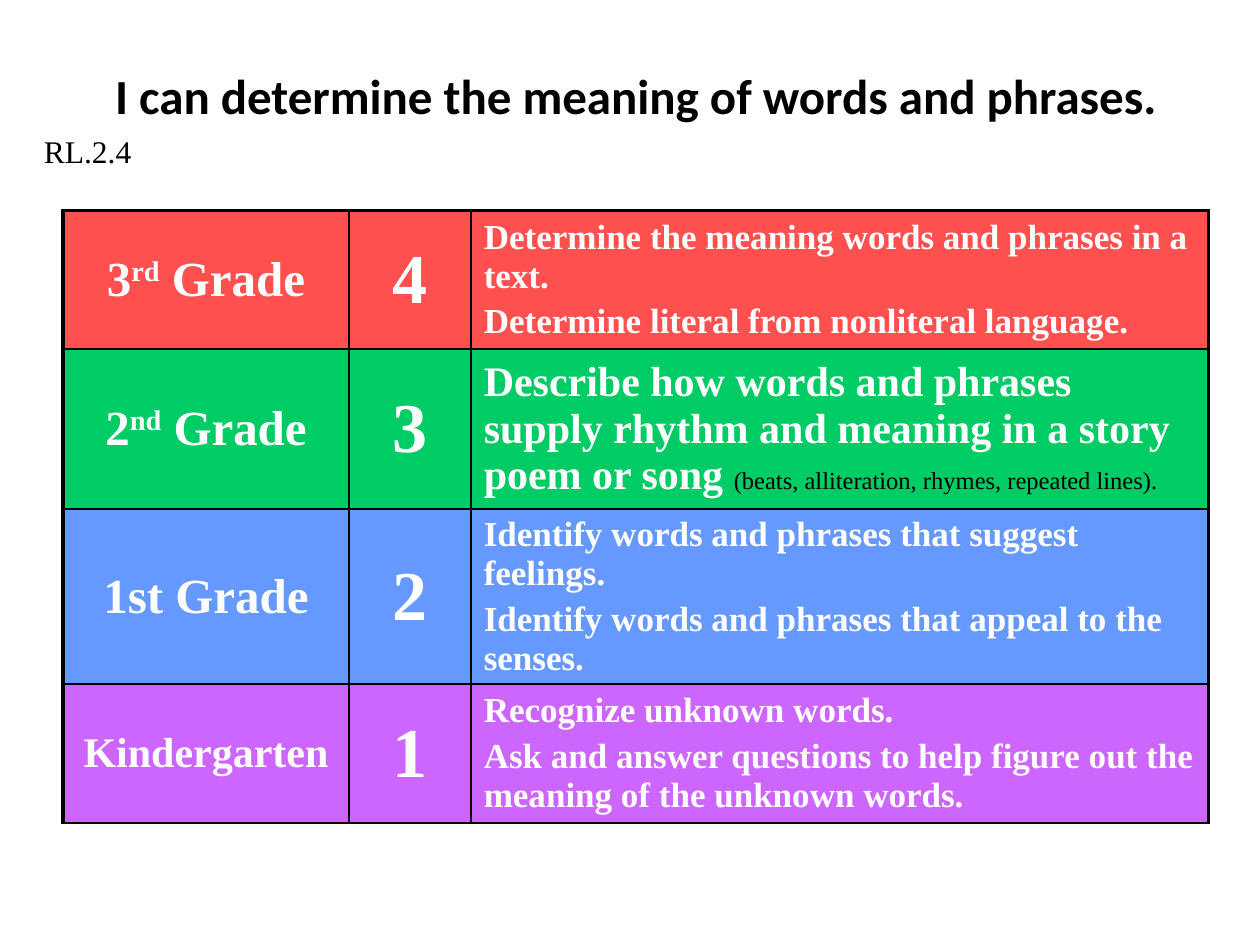
from dataclasses import dataclass
from typing import Any

from lxml import etree
from pptx import Presentation
from pptx.dml.color import RGBColor
from pptx.enum.text import MSO_ANCHOR, PP_ALIGN
from pptx.oxml.ns import qn
from pptx.util import Inches, Pt

MIDDLE = MSO_ANCHOR.MIDDLE
LEFT, CENTER = PP_ALIGN.LEFT, PP_ALIGN.CENTER
SERIF, SANS = "Times New Roman", "Calibri"
COLORS = {
    "black": "000000", "white": "FFFFFF", "red": "FF5050",
    "green": "00CC66", "blue": "6699FF", "purple": "CC66FF",
}
WIDTHS = (2.27, 0.97, 5.85)
# Line weights in points, from left to right and from top to bottom
UPRIGHTS = (2.25, 1, 1, 2.25)
LEVELS = {
    0: (2.25, 1.5, 1, 1, 1.5),
    1: (2.25, 1.5, 1, 1, 1.5),
    2: (2.25, 1.5, 1.5, 1.5, 1.5),
}


@dataclass
class Span:
    text: str
    size: float
    color: str = "white"
    bold: bool = True
    font: str = SERIF
    rise: int = 0


@dataclass
class Grade:
    name: list[Span]
    score: str
    goals: list[list[Span]]
    fill: str
    height: float


GRADES = [
    Grade([Span("3", 28), Span("rd", 28, rise=30), Span(" Grade", 28)], "4",
          [[Span("Determine the meaning words and phrases in a text.", 20)],
           [Span("Determine literal from nonliteral language.", 20)]],
          "red", 1.1),
    Grade([Span("2", 28), Span("nd", 28, rise=30), Span(" Grade", 28)], "3",
          [[Span("Describe how words and phrases supply rhythm and meaning "
                 "in a story poem or song ", 24),
            Span("(beats, alliteration, rhymes, repeated lines).", 14,
                 "black", False)]],
          "green", 1.27),
    Grade([Span("1st Grade", 28)], "2",
          [[Span("Identify words and phrases that suggest feelings.", 20)],
           [Span("Identify words and phrases that appeal to the senses.", 20)]],
          "blue", 1.39),
    Grade([Span("Kindergarten", 24)], "1",
          [[Span("Recognize unknown words.", 20)],
           [Span("Ask and answer questions to help figure out the meaning "
                 "of the unknown words.", 20)]],
          "purple", 1.1),
]


def rgb(name: str) -> RGBColor:
    return RGBColor.from_string(COLORS[name])


def write(frame: Any, paras: list[list[Span]], align: Any, gap: float = 0) -> None:
    """Fill a text frame; gap is the space before, as a share of text size."""
    frame.word_wrap = True
    for i, spans in enumerate(paras):
        para = frame.add_paragraph() if i else frame.paragraphs[0]
        para.alignment = align
        para.space_before = Pt(gap * spans[0].size)
        for span in spans:
            run = para.add_run()
            run.text = span.text
            style = {"name": span.font, "size": Pt(span.size), "bold": span.bold}
            for key, value in style.items():
                setattr(run.font, key, value)
            run.font.color.rgb = rgb(span.color)
            if span.rise:
                run._r.get_or_add_rPr().set("baseline", str(span.rise * 1000))


def edge(cell: Any, sides: dict[str, float]) -> None:
    """Draw the cell borders; they must stand before the fill."""
    props = cell._tc.get_or_add_tcPr()
    for i, (side, weight) in enumerate(sides.items()):
        line = etree.Element(qn(f"a:ln{side}"), w=str(int(Pt(weight))))
        fill = etree.SubElement(line, qn("a:solidFill"))
        etree.SubElement(fill, qn("a:srgbClr"), val=COLORS["black"])
        props.insert(i, line)


def draw_table(slide: Any) -> None:
    high = sum(grade.height for grade in GRADES)
    frame = slide.shapes.add_table(
        len(GRADES), len(WIDTHS), Inches(0.5), Inches(1.67),
        Inches(sum(WIDTHS)), Inches(high))
    table = frame.table
    table.first_row = table.horz_banding = False
    for col, width in zip(table.columns, WIDTHS):
        col.width = Inches(width)
    for r, grade in enumerate(GRADES):
        table.rows[r].height = Inches(grade.height)
        parts = [([grade.name], CENTER), ([[Span(grade.score, 40)]], CENTER),
                 (grade.goals, LEFT)]
        for c, (paras, align) in enumerate(parts):
            cell = table.cell(r, c)
            cell.vertical_anchor = MIDDLE
            cell.fill.solid()
            cell.fill.fore_color.rgb = rgb(grade.fill)
            write(cell.text_frame, paras, align, 0.2)
            edge(cell, {"L": UPRIGHTS[c], "R": UPRIGHTS[c + 1],
                        "T": LEVELS[c][r], "B": LEVELS[c][r + 1]})


def main() -> None:
    deck = Presentation()
    deck.slide_width, deck.slide_height = Inches(10), Inches(7.5)
    slide = deck.slides.add_slide(deck.slide_layouts[5])
    title = slide.shapes.title
    place = {"left": 0.42, "top": 0.25, "width": 9.25, "height": 1}
    for key, value in place.items():
        setattr(title, key, Inches(value))
    title.text_frame.vertical_anchor = MIDDLE
    heading = Span("I can determine the meaning of words and phrases.", 28,
                   "black", font=SANS)
    write(title.text_frame, [[heading]], CENTER)
    draw_table(slide)
    code = slide.shapes.add_textbox(
        Inches(0.25), Inches(1), Inches(1.42), Inches(0.4))
    write(code.text_frame, [[Span("RL.2.4", 18, "black", False)]], LEFT)
    deck.save("out.pptx")


if __name__ == "__main__":
    main()
